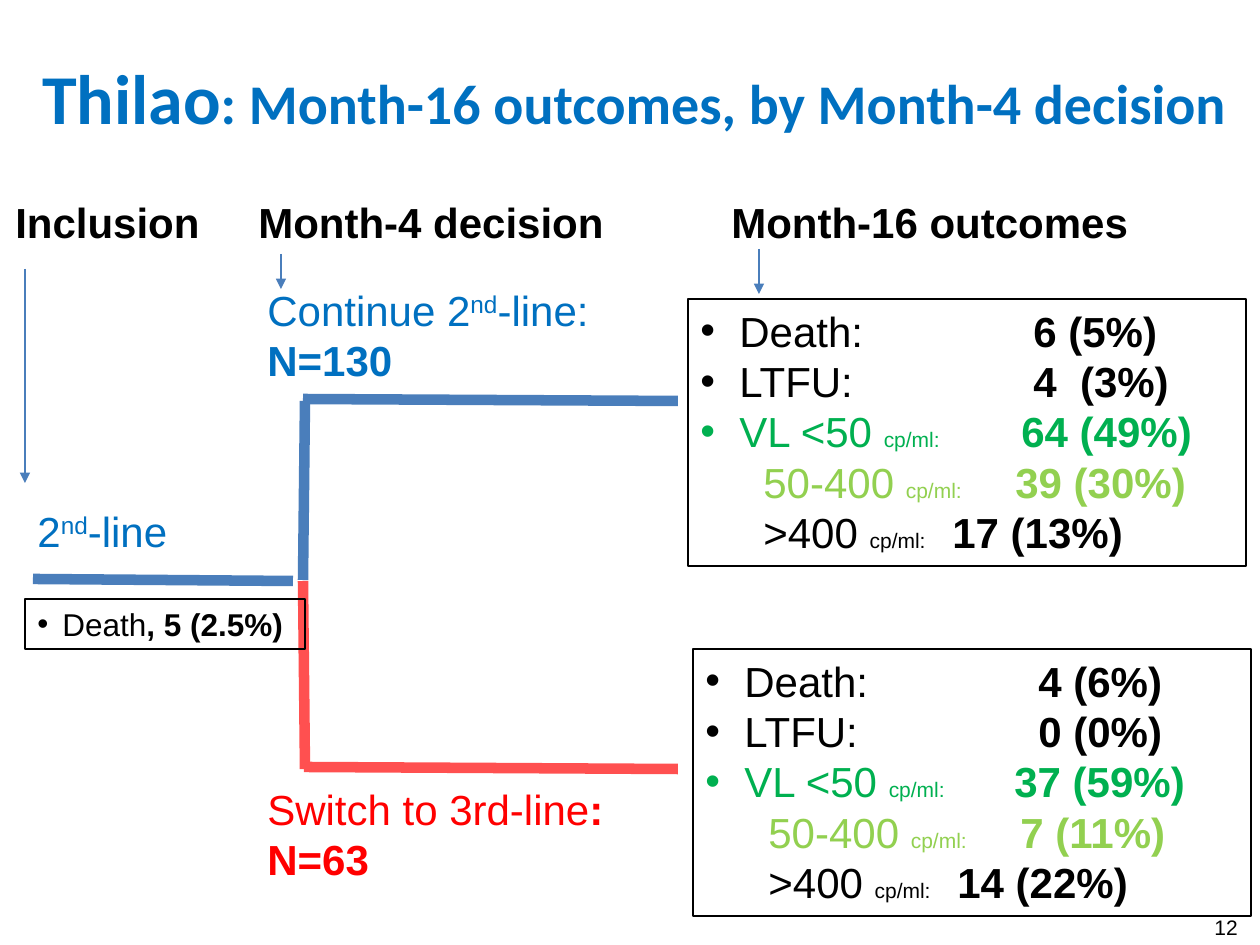
from dataclasses import dataclass

from lxml import etree
from pptx import Presentation
from pptx.dml.color import RGBColor
from pptx.enum.shapes import MSO_CONNECTOR, MSO_SHAPE
from pptx.enum.text import MSO_ANCHOR, PP_ALIGN
from pptx.oxml.ns import qn
from pptx.util import Pt

STRAIGHT = MSO_CONNECTOR.STRAIGHT
RECTANGLE = MSO_SHAPE.RECTANGLE
MIDDLE, TOP = MSO_ANCHOR.MIDDLE, MSO_ANCHOR.TOP
LEFT, CENTER = PP_ALIGN.LEFT, PP_ALIGN.CENTER
PX_PER_INCH = 126


@dataclass(frozen=True)
class Theme:
    heading_font: str = "Calibri"
    body_font: str = "Arial"
    black: str = "000000"
    blue: str = "0070C0"
    red: str = "FF0000"
    green: str = "00B050"
    light_green: str = "92D050"
    branch_blue: str = "4A7EBB"
    branch_red: str = "FF5050"
    title_large: int = 40
    title: int = 32
    body: int = 24
    note: int = 18
    small: int = 12
    branch_width: float = 6
    thin_width: float = 0.75


THEME = Theme()


def px(length):
    return round(length * 914400 / PX_PER_INCH)


def add_run(paragraph, text, *, size=THEME.body, color=THEME.black, bold=False,
            font=THEME.body_font, superscript=False):
    run = paragraph.add_run()
    run.text = text
    run.font.name = font
    run.font.size = Pt(size)
    run.font.bold = bold
    run.font.color.rgb = RGBColor.from_string(color)
    if superscript:
        run.font._element.set("baseline", "30000")


def set_layout(paragraph, margin=0, bullet=False, tab=None):
    """Set the left margin, a hanging bullet and one left tab stop, in px."""
    properties = paragraph._p.get_or_add_pPr()
    properties.set("marL", str(px(margin)))
    properties.set("indent", str(-px(margin) if bullet else 0))
    if bullet:
        etree.SubElement(properties, qn("a:buFont"), typeface=THEME.body_font)
        etree.SubElement(properties, qn("a:buChar"), char="•")
    else:
        etree.SubElement(properties, qn("a:buNone"))
    if tab:
        tabs = etree.SubElement(properties, qn("a:tabLst"))
        etree.SubElement(tabs, qn("a:tab"), pos=str(px(tab)), algn="l")


class SlideBuilder:
    def __init__(self, presentation, theme):
        self.theme = theme
        self.slide = presentation.slides.add_slide(presentation.slide_layouts[5])

    def title(self, box, runs):
        shape = self.slide.shapes.title
        shape.left, shape.top, shape.width, shape.height = map(px, box)
        frame = shape.text_frame
        frame.word_wrap = True
        frame.vertical_anchor = MIDDLE
        paragraph = frame.paragraphs[0]
        paragraph.alignment = CENTER
        for text, style in runs:
            add_run(paragraph, text, **style)

    def fill_text(self, shape, lines, wrap=True):
        """Write lines, each a list of (text, style) runs and a layout."""
        frame = shape.text_frame
        frame.word_wrap = wrap
        frame.vertical_anchor = TOP
        for index, (runs, layout) in enumerate(lines):
            paragraph = frame.add_paragraph() if index else frame.paragraphs[0]
            paragraph.alignment = LEFT
            set_layout(paragraph, **layout)
            for text, style in runs:
                add_run(paragraph, text, **style)

    def label(self, box, *lines, wrap=True):
        shape = self.slide.shapes.add_textbox(*map(px, box))
        self.fill_text(shape, [(runs, {}) for runs in lines], wrap)

    def framed_list(self, box, lines):
        shape = self.slide.shapes.add_shape(RECTANGLE, *map(px, box))
        shape.shadow.inherit = False
        shape.fill.background()
        shape.line.color.rgb = RGBColor.from_string(self.theme.black)
        shape.line.width = Pt(self.theme.thin_width)
        self.fill_text(shape, lines)

    def outcomes(self, box, rows):
        """Frame the outcome rows, each a (value, tab stop) pair."""
        theme = self.theme
        kinds = (
            ("Death:", "", theme.black, True),
            ("LTFU:", "", theme.black, True),
            ("VL <50 ", "cp/ml:", theme.green, True),
            ("50-400 ", "cp/ml:", theme.light_green, False),
            (">400 ", "cp/ml:", theme.black, False),
        )
        lines = []
        for (name, unit, color, bullet), (value, tab) in zip(kinds, rows):
            runs = [(name, {"color": color})]
            if unit:
                runs.append((unit, {"color": color, "size": theme.small}))
            runs.append(("\t" + value, {"color": color, "bold": True}))
            margin = 39 if bullet else 63
            lines.append((runs, {"margin": margin, "bullet": bullet, "tab": tab}))
        self.framed_list(box, lines)

    def line(self, start, end, color, width, arrow=False):
        connector = self.slide.shapes.add_connector(
            STRAIGHT, *map(px, (*start, *end)))
        connector.line.color.rgb = RGBColor.from_string(color)
        connector.line.width = Pt(width)
        if arrow:
            etree.SubElement(connector.line._get_or_add_ln(), qn("a:tailEnd"),
                             type="triangle")
        etree.SubElement(connector._element.spPr, qn("a:effectLst"))

    def branch(self, start, end, color):
        self.line(start, end, color, self.theme.branch_width)

    def arrow_down(self, x, top, bottom):
        self.line((x, top), (x, bottom), self.theme.branch_blue,
                  self.theme.thin_width, arrow=True)


def main():
    presentation = Presentation()
    presentation.slide_width, presentation.slide_height = px(1260), px(945)
    builder = SlideBuilder(presentation, THEME)
    heading = {"color": THEME.blue, "bold": True, "font": THEME.heading_font}
    bold = {"bold": True}
    blue = {"color": THEME.blue}
    blue_super = {**blue, "superscript": True}
    red = {"color": THEME.red}

    builder.title((6, 40, 1257, 113), [
        ("Thilao", {**heading, "size": THEME.title_large}),
        (": Month-16 outcomes, by Month-4 decision",
         {**heading, "size": THEME.title}),
    ])

    builder.branch((33, 579), (293, 581), THEME.branch_blue)
    builder.branch((303, 399), (678, 401), THEME.branch_blue)
    builder.branch((304, 767), (678, 769), THEME.branch_red)
    builder.branch((305, 401), (303, 580), THEME.branch_blue)
    builder.branch((303, 581), (305, 769), THEME.branch_red)

    for left, width, text in ((3, 212, "Inclusion"),
                              (246, 507, "Month-4 decision"),
                              (719, 507, "Month-16 outcomes")):
        builder.label((left, 190, width, 64), [(text, bold)])
    for x, top, bottom in ((25, 269, 483), (281, 254, 289), (759, 249, 294)):
        builder.arrow_down(x, top, bottom)

    builder.label((25, 499, 256, 64),
                  [("2", blue), ("nd", blue_super), ("-line", blue)])
    builder.label((255, 278, 354, 115),
                  [("Continue 2", blue), ("nd", blue_super), ("-line:", blue)],
                  [("N=130", {**blue, **bold})], wrap=False)
    builder.label((255, 777, 365, 115),
                  [("Switch to 3rd-line", red), (":", {**red, **bold})],
                  [("N=63", {**red, **bold})], wrap=False)

    builder.outcomes((688, 299, 558, 267), (
        ("6 (5%)", 333), ("4  (3%)", 333), ("64 (49%)", 321),
        ("39 (30%)", 327), ("17 (13%)", 252)))
    builder.outcomes((693, 649, 558, 267), (
        ("4 (6%)", 333), ("0 (0%)", 333), ("37 (59%)", 309),
        ("7 (11%)", 339), ("14 (22%)", 272)))
    note = {"size": THEME.note}
    builder.framed_list((25, 599, 280, 50), [
        ([("Death", note), (", 5 (2.5%)", {**note, **bold})],
         {"margin": 25, "bullet": True})])
    builder.label((1202, 908, 49, 38), [("12", {"size": THEME.small})])
    presentation.save("out.pptx")


if __name__ == "__main__":
    main()
